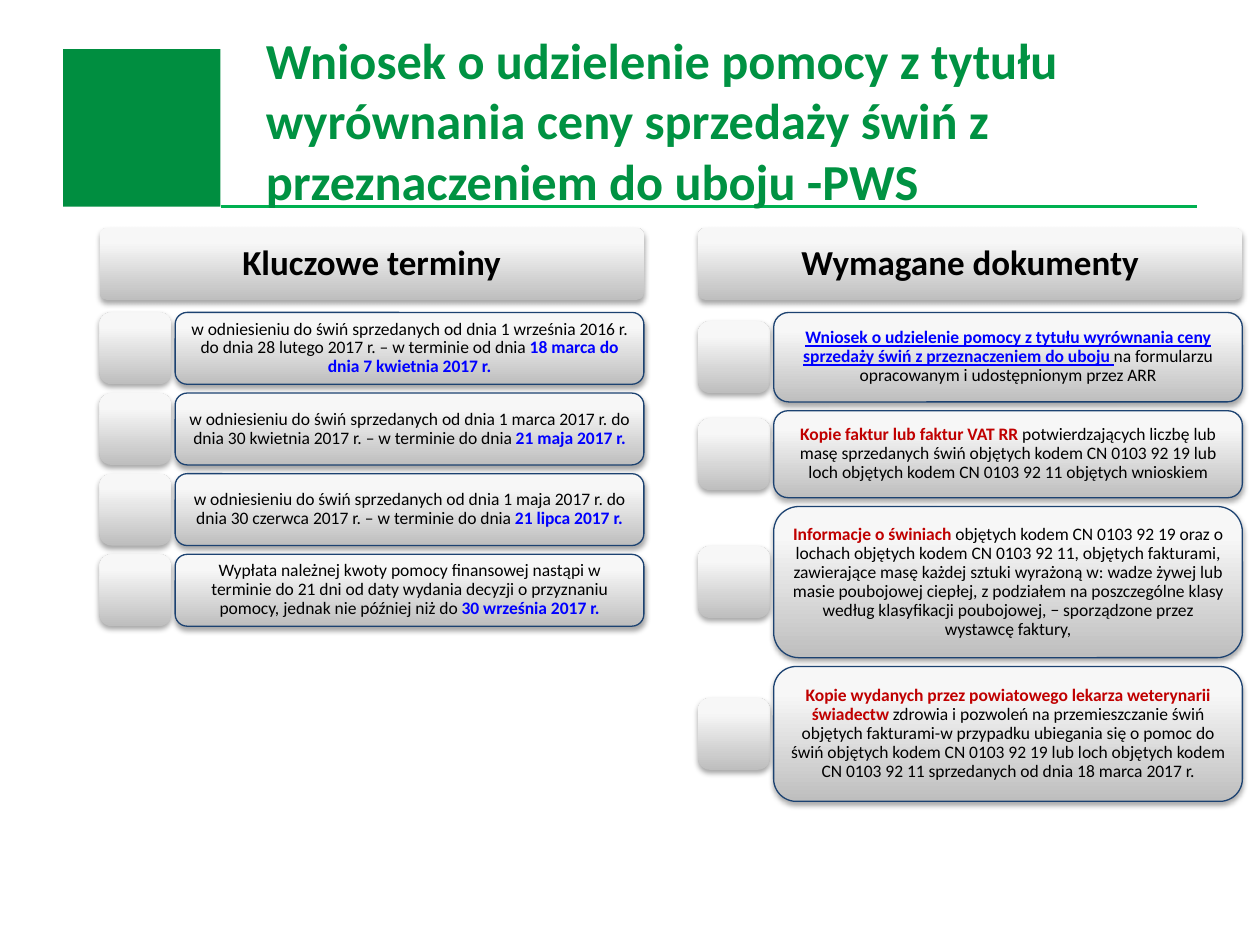
"""Build the slide on pig sale price compensation: key dates and required documents."""
from pptx import Presentation
from pptx.dml.color import RGBColor
from pptx.enum import shapes, text
from pptx.oxml import parse_xml
from pptx.oxml.ns import nsdecls
from pptx.util import Inches, Pt

GREEN = RGBColor(0x00, 0x8E, 0x40)
TITLE_GREEN = RGBColor(0x00, 0x92, 0x42)
LINE_GREEN = RGBColor(0x00, 0xB0, 0x50)
NAVY = RGBColor(0x1C, 0x42, 0x71)
BLACK = RGBColor(0x00, 0x00, 0x00)
BLUE = RGBColor(0x00, 0x00, 0xFF)
RED = RGBColor(0xC0, 0x00, 0x00)
GRADIENT = ((0, RGBColor(0xBE, 0xBE, 0xBE)), (80, RGBColor(0xF7, 0xF7, 0xF7)), (100, RGBColor(0xF8, 0xF8, 0xF8)))
FONT = "Calibri"

TOP, ROW_TOP, GAP = 1.81, 2.48, 0.07
HEADER_WIDTH, TILE, CARD_OFFSET, CARD_WIDTH = 4.32, 0.57, 0.6, 3.72

COLUMNS = [
    (0.79, "Kluczowe terminy", [
        (0.57, [("w odniesieniu do świń sprzedanych od dnia 1 września 2016 r. do dnia 28 lutego 2017 r. "
                 "– w terminie od dnia ", BLACK), ("18 marca do dnia 7 kwietnia 2017 r.", BLUE)]),
        (0.57, [("w odniesieniu do świń sprzedanych od dnia 1 marca 2017 r. do dnia 30 kwietnia 2017 r. "
                 "– w terminie do dnia ", BLACK), ("21 maja 2017 r.", BLUE)]),
        (0.57, [("w odniesieniu do świń sprzedanych od dnia 1 maja 2017 r. do dnia 30 czerwca 2017 r. "
                 "– w terminie do dnia ", BLACK), ("21 lipca 2017 r.", BLUE)]),
        (0.57, [("Wypłata należnej kwoty pomocy finansowej nastąpi w terminie do 21 dni od daty wydania decyzji "
                 "o przyznaniu pomocy, jednak nie później niż do ", BLACK), ("30 września 2017 r.", BLUE)]),
    ]),
    (5.54, "Wymagane dokumenty", [
        (0.71, [("Wniosek o udzielenie pomocy z tytułu wyrównania ceny sprzedaży świń z przeznaczeniem do uboju ", BLUE),
                ("na formularzu opracowanym i udostępnionym przez ARR", BLACK)]),
        (0.69, [("Kopie faktur lub faktur VAT RR ", RED),
                ("potwierdzających liczbę lub masę sprzedanych świń objętych kodem CN 0103 92 19 "
                 "lub loch objętych kodem CN 0103 92 11 objętych wnioskiem", BLACK)]),
        (1.2, [("Informacje o świniach ", RED),
               ("objętych kodem CN 0103 92 19 oraz o lochach objętych kodem CN 0103 92 11, objętych fakturami, "
                "zawierające masę każdej sztuki wyrażoną w: wadze żywej lub masie poubojowej ciepłej, z podziałem "
                "na poszczególne klasy według klasyfikacji poubojowej, − sporządzone przez wystawcę faktury,", BLACK)]),
        (1.07, [("Kopie wydanych przez powiatowego lekarza weterynarii świadectw ", RED),
                ("zdrowia i pozwoleń na przemieszczanie świń objętych fakturami-w przypadku ubiegania się o pomoc "
                 "do świń objętych kodem CN 0103 92 19 lub loch objętych kodem CN 0103 92 11 sprzedanych "
                 "od dnia 18 marca 2017 r.", BLACK)]),
    ]),
]


def add_panel(left, top, width, height, corner=0.167):
    panel = slide.shapes.add_shape(shapes.MSO_SHAPE.ROUNDED_RECTANGLE, Inches(left), Inches(top),
                                   Inches(width), Inches(height))
    panel.adjustments[0] = corner
    stops = "".join(f'<a:gs pos="{position * 1000}"><a:srgbClr val="{color}"/></a:gs>' for position, color in GRADIENT)
    properties = panel.element.spPr
    properties.append(parse_xml(f'<a:gradFill {nsdecls("a")}><a:gsLst>{stops}</a:gsLst>'
                                '<a:lin ang="16200000" scaled="0"/></a:gradFill>'))
    panel.line.fill.background()
    properties.append(parse_xml(f'<a:effectLst {nsdecls("a")}><a:outerShdw blurRad="40000" dist="23000" dir="5400000" '
                                'rotWithShape="0"><a:srgbClr val="000000"><a:alpha val="35000"/></a:srgbClr>'
                                '</a:outerShdw></a:effectLst>'))
    return panel


def write_text(panel, runs, size, inset):
    frame = panel.text_frame
    frame.word_wrap = True
    frame.vertical_anchor = text.MSO_ANCHOR.MIDDLE
    frame.margin_left = frame.margin_right = frame.margin_top = frame.margin_bottom = Inches(inset)
    paragraph = frame.paragraphs[0]
    paragraph.alignment = text.PP_ALIGN.CENTER
    paragraph.line_spacing = 0.9
    for wording, color in runs:
        run = paragraph.add_run()
        run.text = wording
        run.font.name, run.font.size = FONT, Pt(size)
        run.font.color.rgb = color
        run.font.bold = color != BLACK


presentation = Presentation()
presentation.slide_width, presentation.slide_height = Inches(10), Inches(7.5)
slide = presentation.slides.add_slide(presentation.slide_layouts[5])

rule = slide.shapes.add_connector(shapes.MSO_CONNECTOR.STRAIGHT, Inches(1.75), Inches(1.64), Inches(9.5), Inches(1.64))
rule.line.color.rgb = LINE_GREEN
rule.line.width = Pt(1.5)
rule.element.spPr.append(parse_xml(f'<a:effectLst {nsdecls("a")}/>'))

square = slide.shapes.add_shape(shapes.MSO_SHAPE.RECTANGLE, Inches(0.5), Inches(0.39), Inches(1.25), Inches(1.25))
square.shadow.inherit = False
square.fill.solid()
square.fill.fore_color.rgb = GREEN
square.line.fill.background()

title = slide.shapes.title
title.element.getparent().append(title.element)
title.left, title.top, title.width, title.height = Inches(2.01), Inches(0.24), Inches(7.49), Inches(1.42)
title.text_frame.text = "Wniosek o udzielenie pomocy z tytułu wyrównania ceny sprzedaży świń z przeznaczeniem do uboju -PWS"
title.text_frame.auto_size = text.MSO_AUTO_SIZE.NONE
title.text_frame.vertical_anchor = text.MSO_ANCHOR.MIDDLE
title_paragraph = title.text_frame.paragraphs[0]
title_paragraph.alignment = text.PP_ALIGN.LEFT
title_font = title_paragraph.runs[0].font
title_font.name, title_font.size, title_font.bold = FONT, Pt(28.8), True
title_font.color.rgb = TITLE_GREEN

for left, heading, rows in COLUMNS:
    header = add_panel(left, TOP, HEADER_WIDTH, TILE, 0.1)
    write_text(header, [(heading, BLACK)], 20, 0.03)
    header.text_frame.paragraphs[0].runs[0].font.bold = True
    top = ROW_TOP
    for height, runs in rows:
        add_panel(left, top + (height - TILE) / 2, TILE, TILE)
        card = add_panel(left + CARD_OFFSET, top, CARD_WIDTH, height)
        card.line.color.rgb = NAVY
        card.line.width = Pt(0.75)
        write_text(card, runs, 10, 0.08)
        first_run = card.text_frame.paragraphs[0].runs[0]
        if first_run.font.color.rgb == BLUE:
            first_run.font.underline = True
        top += height + GAP

presentation.save("out.pptx")
